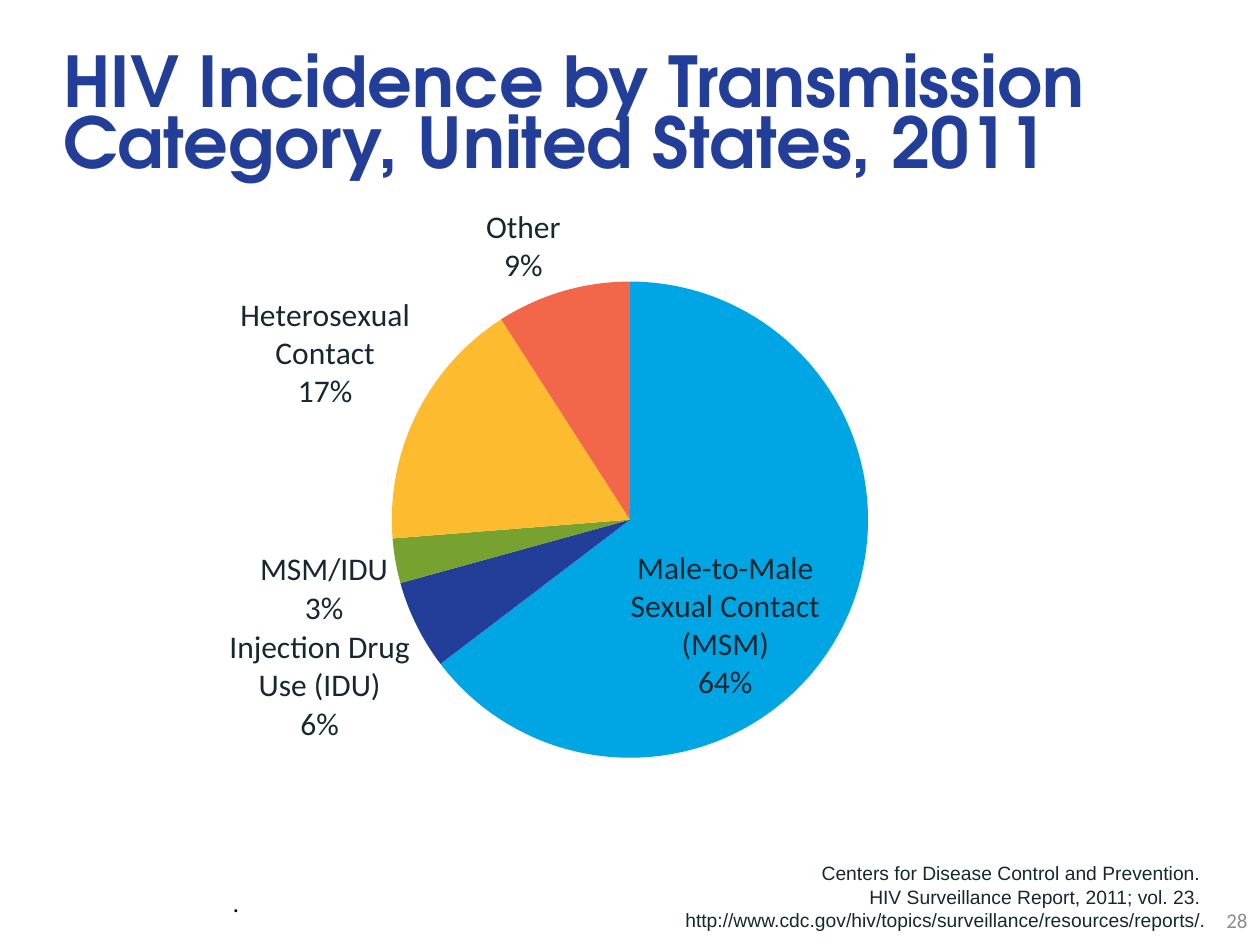
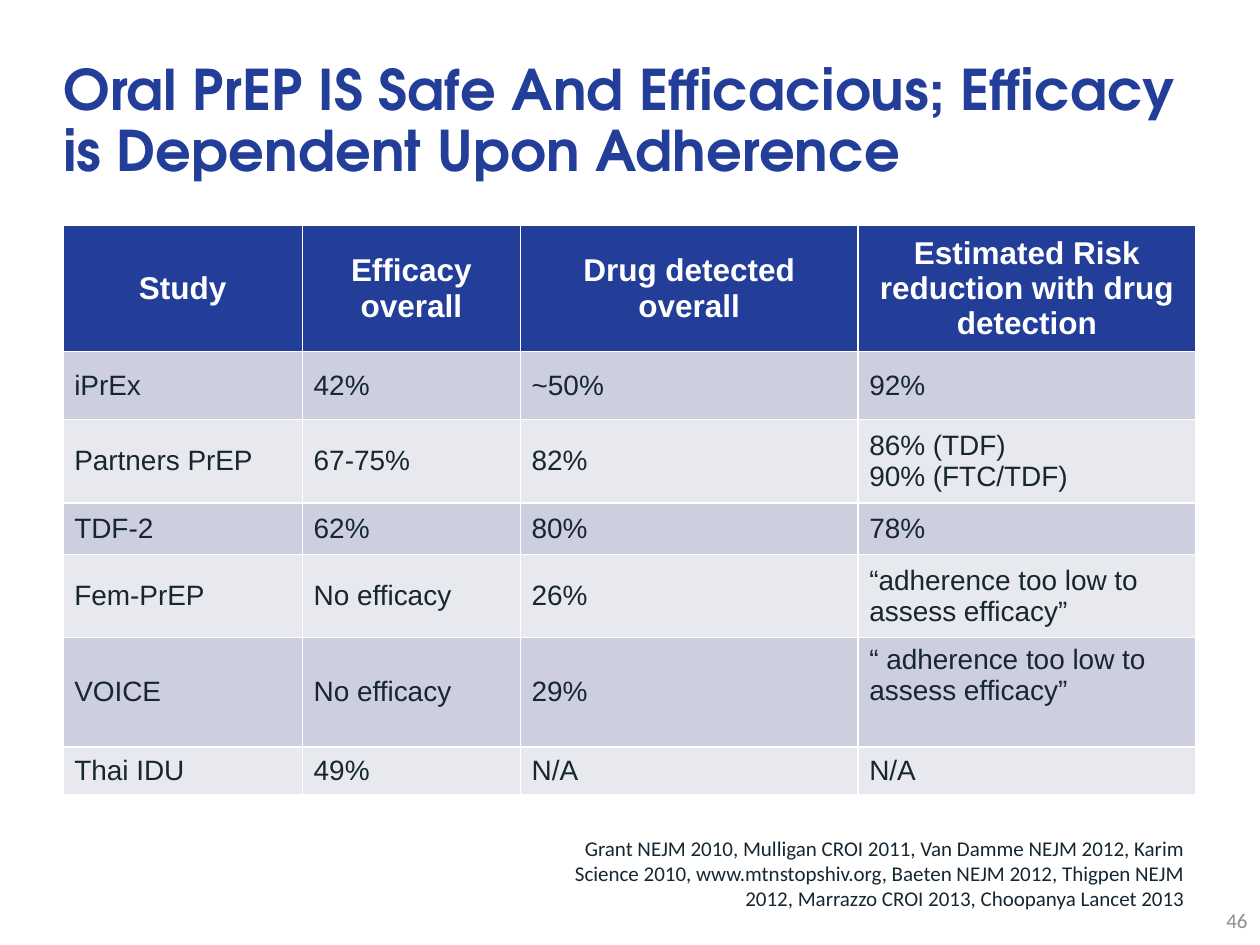
import pptx
import pptx.chart.data
import pptx.dml.color
import pptx.enum.chart
import pptx.enum.text
import pptx.oxml
import pptx.oxml.ns
import pptx.util

Inches = pptx.util.Inches
Pt = pptx.util.Pt
RGBColor = pptx.dml.color.RGBColor
ALIGN = pptx.enum.text.PP_ALIGN
ANCHOR = pptx.enum.text.MSO_ANCHOR

NAVY = RGBColor(0x23, 0x3E, 0x99)
SKY = RGBColor(0x00, 0xA5, 0xE3)
GREEN = RGBColor(0x78, 0xA2, 0x2F)
YELLOW = RGBColor(0xFD, 0xBB, 0x30)
CORAL = RGBColor(0xF2, 0x66, 0x49)
INK = RGBColor(0x16, 0x27, 0x31)
GREY = RGBColor(0x8C, 0x8E, 0x90)
BLACK = RGBColor(0, 0, 0)
WHITE = RGBColor(0xFF, 0xFF, 0xFF)
BANDS = (RGBColor(0xCD, 0xCE, 0xDE), RGBColor(0xE8, 0xE8, 0xEF))

TITLE_FONT, CHART_FONT, TABLE_FONT = "TeX Gyre Adventor", "Calibri", "Arial"
MARGIN, CONTENT_WIDTH = 0.5, 9

TRANSMISSION = [
    ("Male-to-Male Sexual Contact (MSM)", 64, SKY),
    ("Injection Drug Use (IDU)", 6, NAVY),
    ("MSM/IDU", 3, GREEN),
    ("Heterosexual Contact", 17, YELLOW),
    ("Other", 9, CORAL),
]
CHART_SOURCE = [
    "Centers for Disease Control and Prevention. ",
    "HIV Surveillance Report, 2011; vol. 23. ",
    "http://www.cdc.gov/hiv/topics/surveillance/resources/reports/.",
]

STUDIES = [
    ("Study", "Efficacy overall", "Drug detected overall",
     "Estimated Risk reduction with drug detection"),
    ("iPrEx", "42%", "~50%", "92%"),
    ("Partners PrEP", "67-75%", "82%", "86% (TDF)\n90% (FTC/TDF)"),
    ("TDF-2", "62%", "80%", "78%"),
    ("Fem-PrEP", "No efficacy", "26%", "“adherence too low to assess efficacy”"),
    ("VOICE", "No efficacy", "29%", "“ adherence too low to assess efficacy”"),
    ("Thai IDU", "49%", "N/A", "N/A"),
]
COLUMN_WIDTHS = (1.9, 1.73, 2.68, 2.68)
ROW_HEIGHTS = (0.93, 0.54, 0.66, 0.41, 0.66, 0.87, 0.38)
TOP_ANCHORED_CELL = (5, 3)
TABLE_SOURCE = [
    "Grant NEJM 2010, Mulligan CROI 2011, Van Damme NEJM 2012, Karim Science 2010, "
    "www.mtnstopshiv.org, Baeten NEJM 2012, Thigpen NEJM 2012, Marrazzo CROI 2013, "
    "Choopanya Lancet 2013",
]


def style_font(font, name, size, color, bold=False):
    font.name, font.size, font.bold = name, Pt(size), bold
    font.color.rgb = color


def add_text(slide, box, lines, name, size, color, align=ALIGN.RIGHT, anchor=ANCHOR.TOP):
    shape = slide.shapes.add_textbox(*map(Inches, box))
    frame = shape.text_frame
    frame.word_wrap = True
    frame.vertical_anchor = anchor
    frame.text = "\n".join(lines)
    for paragraph in frame.paragraphs:
        paragraph.alignment = align
        style_font(paragraph.font, name, size, color)


def add_titled_slide(presentation, title, title_size, number):
    slide = presentation.slides.add_slide(presentation.slide_layouts[5])
    shape = slide.shapes.title
    shape.left, shape.top = Inches(MARGIN), Inches(0.25)
    shape.width, shape.height = Inches(CONTENT_WIDTH), Inches(1.25)
    frame = shape.text_frame
    frame.text = title
    frame.auto_size = pptx.enum.text.MSO_AUTO_SIZE.NONE
    frame.vertical_anchor = ANCHOR.BOTTOM
    frame.margin_left = frame.margin_right = 0
    paragraph = frame.paragraphs[0]
    paragraph.alignment = ALIGN.LEFT
    paragraph.line_spacing = Pt(35)
    paragraph.space_after = Pt(6)
    style_font(paragraph.font, TITLE_FONT, title_size, NAVY, bold=True)
    add_text(slide, (7.67, 7.1, 2.33, 0.4), [str(number)], CHART_FONT, 12, GREY,
             anchor=ANCHOR.MIDDLE)
    return slide


def manual_layout(settings):
    """Return a c:layout element; settings are (tag, value) pairs in schema order."""
    items = "".join(f'<c:{tag} val="{value}"/>' for tag, value in settings)
    return pptx.oxml.parse_xml(
        f'<c:layout {pptx.oxml.ns.nsdecls("c")}><c:manualLayout>{items}'
        '</c:manualLayout></c:layout>')


def break_label_lines(labels_element):
    """Put the category and the value of a label on separate lines."""
    separator = pptx.oxml.parse_xml(
        f'<c:separator {pptx.oxml.ns.nsdecls("c")}>\n</c:separator>')
    labels_element.find(pptx.oxml.ns.qn("c:showBubbleSize")).addnext(separator)


def add_transmission_pie(slide):
    names, shares, colors = zip(*TRANSMISSION)
    data = pptx.chart.data.CategoryChartData(number_format='0"%"')
    data.categories = names
    data.add_series("Series 1", shares)
    chart = slide.shapes.add_chart(
        pptx.enum.chart.XL_CHART_TYPE.PIE, Inches(MARGIN), Inches(1.5),
        Inches(CONTENT_WIDTH), Inches(5.25), data).chart
    chart.has_legend = chart.has_title = False
    style_font(chart.font, CHART_FONT, 18, INK)
    plot = chart.plots[0]
    plot.vary_by_categories = True
    series = plot.series[0]
    for index, color in enumerate(colors):
        fill = series.points[index].format.fill
        fill.solid()
        fill.fore_color.rgb = color

    labels = series.data_labels
    labels.show_category_name = labels.show_value = True
    labels.show_percentage = False
    labels.number_format, labels.number_format_is_linked = '0"%"', False
    labels.position = pptx.enum.chart.XL_LABEL_POSITION.BEST_FIT
    series.points[0].data_label.position = pptx.enum.chart.XL_LABEL_POSITION.CENTER
    labels_element = labels._element
    break_label_lines(labels_element)
    largest = labels_element.find(pptx.oxml.ns.qn("c:dLbl"))
    largest.find(pptx.oxml.ns.qn("c:showCatName")).set("val", "1")
    largest.find(pptx.oxml.ns.qn("c:showPercent")).set("val", "0")
    break_label_lines(largest)
    largest.find(pptx.oxml.ns.qn("c:idx")).addnext(
        manual_layout([("x", -0.01), ("y", 0.08)]))

    plot_area = plot._element.getparent()
    for layout in plot_area.findall(pptx.oxml.ns.qn("c:layout")):
        plot_area.remove(layout)
    plot_area.insert(0, manual_layout([
        ("layoutTarget", "inner"), ("xMode", "edge"), ("yMode", "edge"),
        ("x", 0.29), ("y", 0.14), ("w", 0.42), ("h", 0.72)]))


def add_study_table(slide):
    table = slide.shapes.add_table(
        len(STUDIES), len(COLUMN_WIDTHS), Inches(MARGIN), Inches(1.79),
        Inches(sum(COLUMN_WIDTHS)), Inches(sum(ROW_HEIGHTS))).table
    for column, width in zip(table.columns, COLUMN_WIDTHS):
        column.width = Inches(width)
    for row_index, (row, height) in enumerate(zip(table.rows, ROW_HEIGHTS)):
        row.height = Inches(height)
        header = row_index == 0
        for column_index, cell in enumerate(row.cells):
            cell.text = STUDIES[row_index][column_index]
            at_top = (row_index, column_index) == TOP_ANCHORED_CELL
            cell.vertical_anchor = ANCHOR.TOP if at_top else ANCHOR.MIDDLE
            cell.margin_left = cell.margin_right = Inches(0.09)
            cell.fill.solid()
            cell.fill.fore_color.rgb = NAVY if header else BANDS[(row_index - 1) % 2]
            for paragraph in cell.text_frame.paragraphs:
                paragraph.alignment = ALIGN.CENTER if header else ALIGN.LEFT
                style_font(paragraph.font, TABLE_FONT, 18 if header else 16,
                           WHITE if header else INK, bold=header)


def main():
    presentation = pptx.Presentation()
    presentation.slide_width, presentation.slide_height = Inches(10), Inches(7.5)

    incidence = add_titled_slide(
        presentation, "HIV Incidence by Transmission Category, United States, 2011", 40, 28)
    add_transmission_pie(incidence)
    add_text(incidence, (1.75, 7, 5.78, 0.34), ["."], CHART_FONT, 14, BLACK, ALIGN.LEFT)
    add_text(incidence, (4.75, 6.79, 4.92, 0.66), CHART_SOURCE, TABLE_FONT, 11, INK)

    efficacy = add_titled_slide(
        presentation,
        "Oral PrEP IS Safe And Efficacious; Efficacy is Dependent Upon Adherence", 32, 46)
    add_study_table(efficacy)
    add_text(efficacy, (4.42, 6.58, 5.08, 0.91), TABLE_SOURCE, CHART_FONT, 12, INK)

    presentation.save("out.pptx")


if __name__ == "__main__":
    main()
